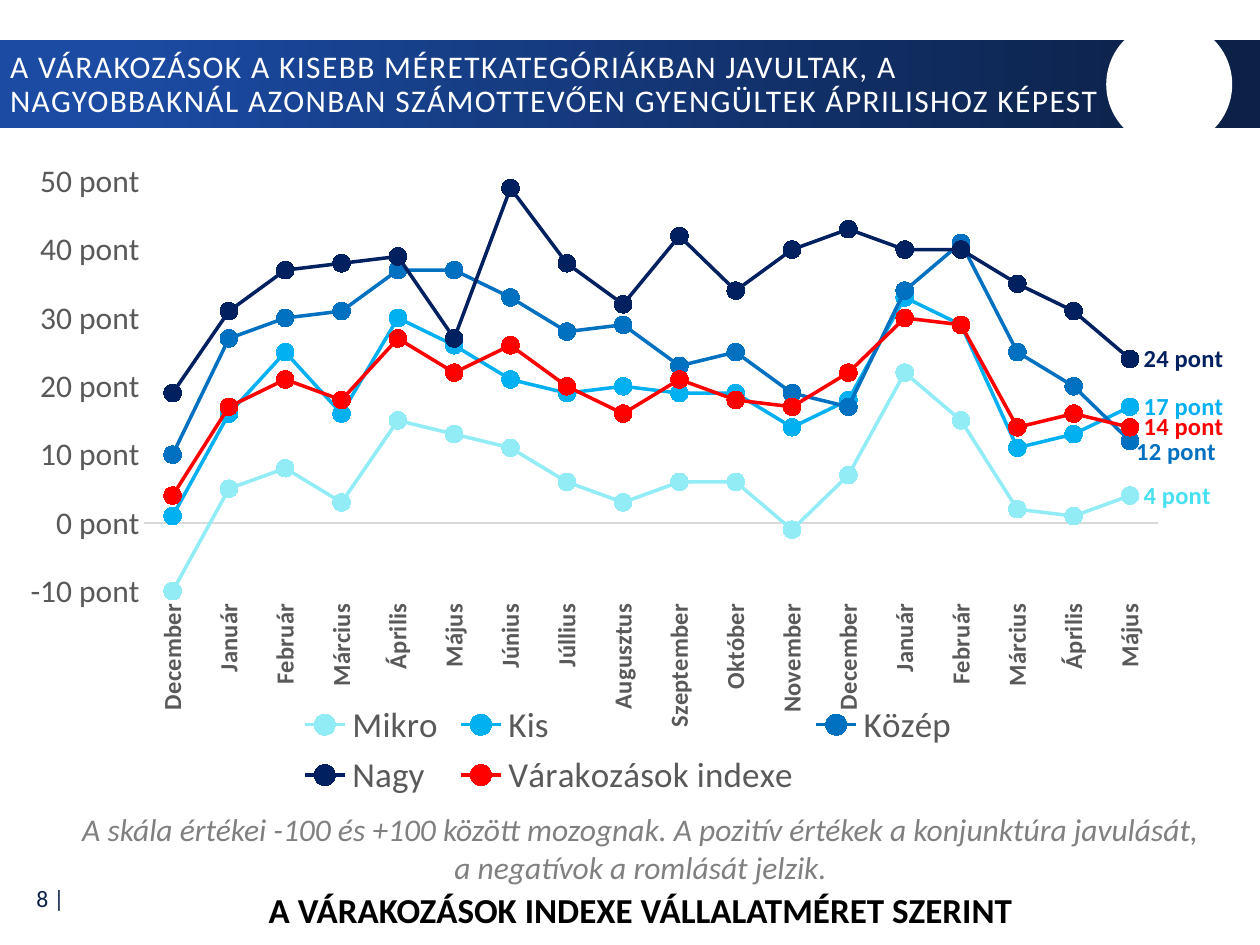
"""Build the slide on expectations by company size."""
from lxml import etree
from pptx import Presentation
from pptx import util as u
from pptx.chart import data
from pptx.dml import color
from pptx.enum import chart as ch
from pptx.enum import shapes, text
from pptx.oxml import ns

FONT = "Calibri"
UNIT_FORMAT = 'General\\ "pont"'
MONTHS = ["December", "Január", "Február", "Március", "Április", "Május", "Június", "Júllius",
          "Augusztus", "Szeptember", "Október", "November", "December", "Január", "Február",
          "Március", "Április", "Május"]
SERIES = [
    ("Mikro", "92ECF6", "48E1F1", [-10, 5, 8, 3, 15, 13, 11, 6, 3, 6, 6, -1, 7, 22, 15, 2, 1, 4]),
    ("Kis", "00B0F0", "00B0F0",
     [1, 16, 25, 16, 30, 26, 21, 19, 20, 19, 19, 14, 18, 33, 29, 11, 13, 17]),
    ("Közép", "0070C0", "0070C0",
     [10, 27, 30, 31, 37, 37, 33, 28, 29, 23, 25, 19, 17, 34, 41, 25, 20, 12]),
    ("Nagy", "002060", "002060",
     [19, 31, 37, 38, 39, 27, 49, 38, 32, 42, 34, 40, 43, 40, 40, 35, 31, 24]),
    ("Várakozások indexe", "FF0000", "FF0000",
     [4, 17, 21, 18, 27, 22, 26, 20, 16, 21, 18, 17, 22, 30, 29, 14, 16, 14]),
]


def rgb(value):
    return color.RGBColor.from_string(value)


def set_font(font, size, fill, bold=False, italic=False):
    font.name, font.size = FONT, u.Pt(size)
    font.bold, font.italic = bold, italic
    font.color.rgb = rgb(fill)


def paint(fill, value):
    fill.solid()
    fill.fore_color.rgb = rgb(value)


def manual_layout(**values):
    layout = etree.Element(ns.qn("c:layout"))
    manual = etree.SubElement(layout, ns.qn("c:manualLayout"))
    for name, value in values.items():
        etree.SubElement(manual, ns.qn("c:" + name)).set("val", str(value))
    return layout


class Slide:
    def __init__(self, deck):
        self.page = deck.slides.add_slide(deck.slide_layouts[5])
        self.title_box = self.page.shapes.title

    def shape(self, kind, left, top, width, height):
        shape = self.page.shapes.add_shape(
            kind, u.Inches(left), u.Inches(top), u.Inches(width), u.Inches(height))
        shape.shadow.inherit = False
        shape.line.fill.background()
        self.title_box.element.addprevious(shape.element)
        return shape

    def band(self, left, top, width, height, stops):
        fill = self.shape(shapes.MSO_SHAPE.RECTANGLE, left, top, width, height).fill
        fill.gradient()
        fill.gradient_angle = 0
        for stop, (position, value) in zip(fill.gradient_stops, stops):
            stop.position = position
            stop.color.rgb = rgb(value)

    def disc(self, left, top, size, value):
        paint(self.shape(shapes.MSO_SHAPE.OVAL, left, top, size, size).fill, value)

    def add_words(self, box, words, size, fill, align, anchor, bold=False, italic=False):
        frame = box.text_frame
        frame.word_wrap = True
        frame.vertical_anchor = anchor
        para = frame.paragraphs[0]
        para.alignment = align
        span = para.add_run()
        span.text = words
        set_font(span.font, size, fill, bold, italic)
        return para, span

    def title(self, left, top, width, height, words):
        box = self.title_box
        box.left, box.top = u.Inches(left), u.Inches(top)
        box.width, box.height = u.Inches(width), u.Inches(height)
        para, span = self.add_words(box, words, 18, "FFFFFF", text.PP_ALIGN.LEFT,
                                    text.MSO_ANCHOR.MIDDLE)
        box.text_frame.auto_size = text.MSO_AUTO_SIZE.NONE
        para.line_spacing = 0.9
        span.font._element.set("spc", "80")

    def label(self, left, top, width, height, words, size, fill,
              align=text.PP_ALIGN.CENTER, anchor=text.MSO_ANCHOR.TOP, **style):
        box = self.page.shapes.add_textbox(
            u.Inches(left), u.Inches(top), u.Inches(width), u.Inches(height))
        self.add_words(box, words, size, fill, align, anchor, **style)

    def line_chart(self, left, top, width, height):
        table = data.CategoryChartData(number_format=UNIT_FORMAT)
        table.categories = MONTHS
        for name, _, _, values in SERIES:
            table.add_series(name, values)
        chart = self.page.shapes.add_chart(
            ch.XL_CHART_TYPE.LINE_MARKERS, u.Inches(left), u.Inches(top),
            u.Inches(width), u.Inches(height), table).chart
        set_font(chart.font, 20, "000000")
        chart.has_title = False
        chart.has_legend = True
        chart.legend.position = ch.XL_LEGEND_POSITION.BOTTOM
        chart.legend.include_in_layout = False
        set_font(chart.legend.font, 20, "595959")
        self.axes(chart)
        plot = chart.plots[0]
        plot.vary_by_categories = False
        for series, (name, fill, label_fill, _) in zip(plot.series, SERIES):
            self.series(series, fill, label_fill, nudged=name == "Közép")
        area = chart._chartSpace.chart.plotArea
        for old in area.findall(ns.qn("c:layout")):
            area.remove(old)
        area.insert(0, manual_layout(layoutTarget="inner", xMode="edge", yMode="edge",
                                     x=0.115, y=0.08, w=0.807, h=0.606))

    def axes(self, chart):
        months, points = chart.category_axis, chart.value_axis
        for axis in (months, points):
            axis.has_major_gridlines = False
            axis.major_tick_mark = axis.minor_tick_mark = ch.XL_TICK_MARK.NONE
        months.tick_label_position = ch.XL_TICK_LABEL_POSITION.LOW
        set_font(months.tick_labels.font, 14, "595959", bold=True)
        turned = months._element.find(ns.qn("c:txPr")).find(ns.qn("a:bodyPr"))
        turned.set("rot", "-5400000")
        turned.set("vert", "horz")
        paint(months.format.line.fill, "D9D9D9")
        months.format.line.width = u.Pt(0.75)
        points.minimum_scale, points.maximum_scale, points.major_unit = -10, 50, 10
        points.tick_labels.number_format = UNIT_FORMAT
        points.tick_labels.number_format_is_linked = False
        set_font(points.tick_labels.font, 18, "595959")
        points.format.line.fill.background()

    def series(self, series, fill, label_fill, nudged):
        series.smooth = False
        paint(series.format.line.fill, fill)
        series.format.line.width = u.Pt(2)
        series.marker.style = ch.XL_MARKER_STYLE.CIRCLE
        series.marker.size = 10
        paint(series.marker.format.fill, fill)
        paint(series.marker.format.line.fill, fill)
        last = len(MONTHS) - 1
        label = series.points[last].data_label
        set_font(label.font, 14, label_fill, bold=True)
        label.position = ch.XL_LABEL_POSITION.RIGHT
        if nudged:
            index = series._element.find(".//" + ns.qn("c:dLbl")).find(ns.qn("c:idx"))
            index.addnext(manual_layout(x=-0.006, y=0.016))


def main():
    deck = Presentation()
    deck.slide_width, deck.slide_height = u.Inches(10), u.Inches(7.5)
    slide = Slide(deck)
    slide.band(0, 0.32, 10, 0.7, [(0.09, "1B4BA3"), (0.95, "0C2148")])
    slide.disc(8.78, 0.17, 1, "FFFFFF")
    slide.title(-0.02, 0.34, 8.92, 0.67,
                "A VÁRAKOZÁSOK A KISEBB MÉRETKATEGÓRIÁKBAN JAVULTAK, A NAGYOBBAKNÁL "
                "AZONBAN SZÁMOTTEVŐEN GYENGÜLTEK ÁPRILISHOZ KÉPEST")
    slide.label(0.01, 6.94, 0.6, 0.37, "8 |", 13.5, "0C2148",
                text.PP_ALIGN.RIGHT, text.MSO_ANCHOR.MIDDLE)
    slide.label(0.52, 6.38, 9.13, 0.71,
                "A skála értékei -100 és +100 között mozognak. A pozitív értékek a "
                "konjunktúra javulását, a negatívok a romlását jelzik.",
                18, "808080", italic=True)
    slide.label(0.1, 7, 9.97, 0.44, "A VÁRAKOZÁSOK INDEXE VÁLLALATMÉRET SZERINT",
                20, "000000", bold=True)
    slide.line_chart(0, 1.01, 9.97, 5.37)
    deck.save("out.pptx")


if __name__ == "__main__":
    main()
